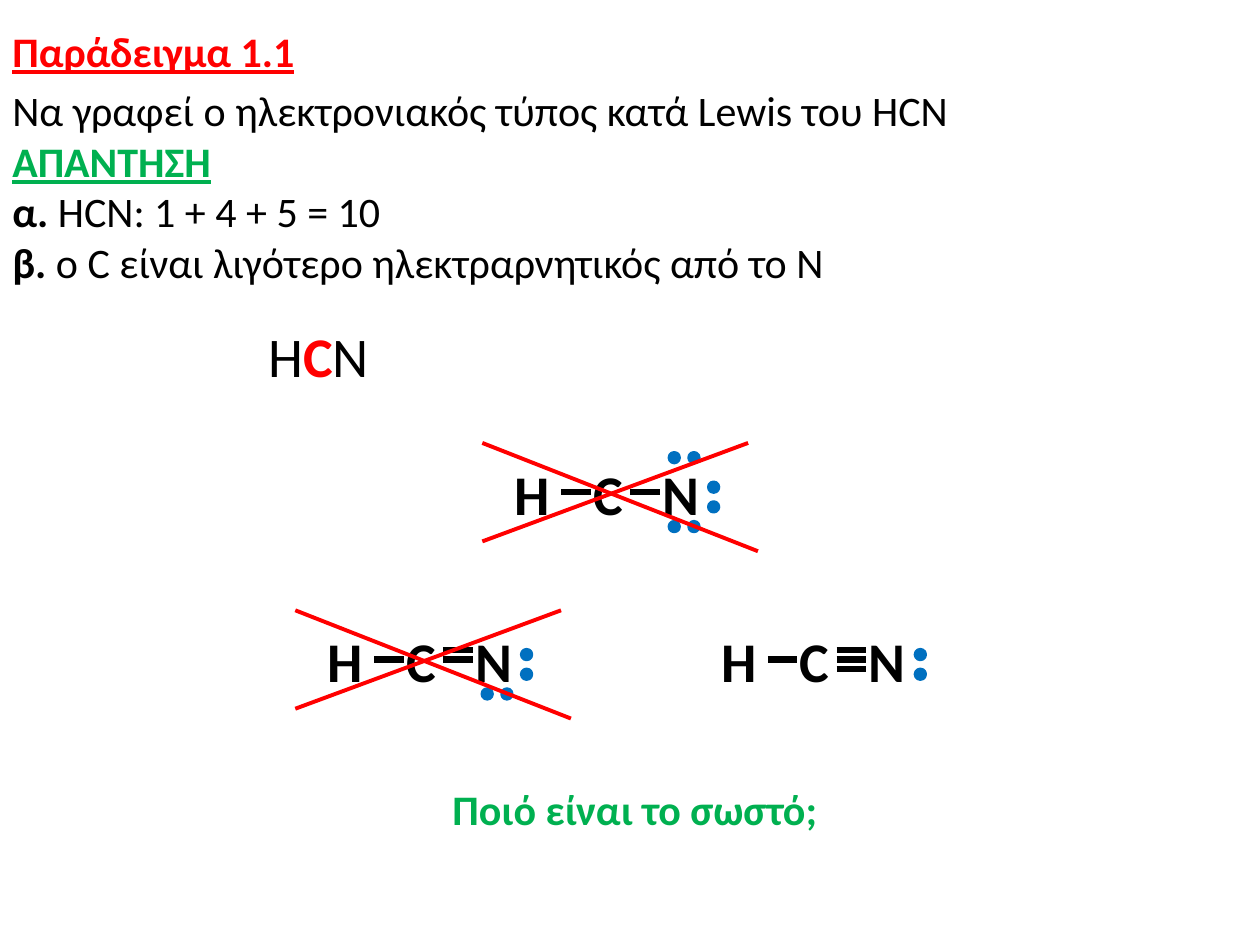
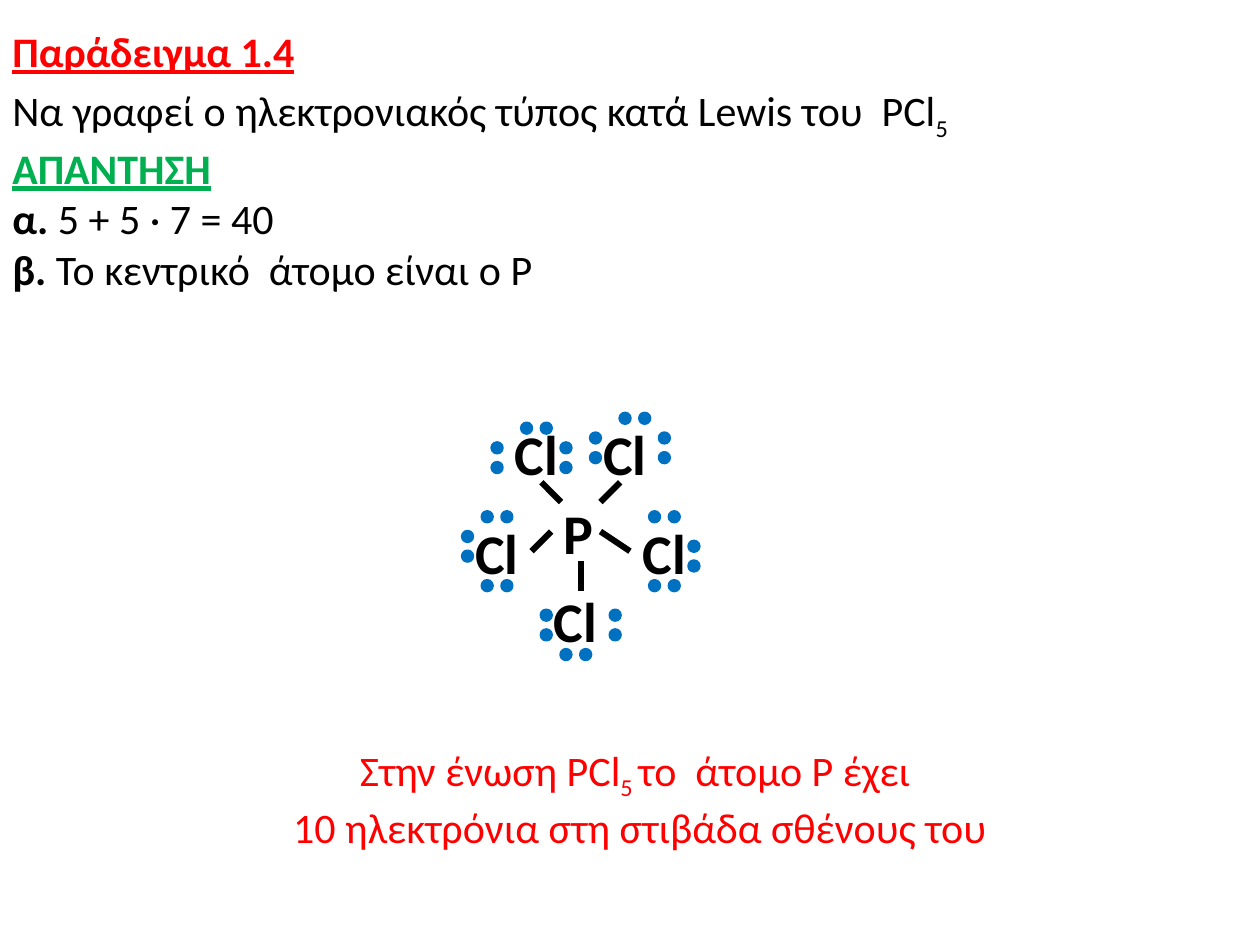
import pptx
import pptx.dml.color
import pptx.enum.shapes
import pptx.enum.text
import pptx.oxml.ns
import pptx.util
from lxml import etree

RED = pptx.dml.color.RGBColor(0xFF, 0x00, 0x00)
GREEN = pptx.dml.color.RGBColor(0x00, 0xB0, 0x50)
BLUE = pptx.dml.color.RGBColor(0x00, 0x70, 0xC0)
BLACK = pptx.dml.color.RGBColor(0x00, 0x00, 0x00)

SLIDE_WIDTH = pptx.util.Inches(10)
SLIDE_HEIGHT = pptx.util.Inches(7.5)
COLUMNS = 128
CELL = SLIDE_WIDTH / COLUMNS  # square cells, so the slide has 96 rows

PLAIN = {"name": "Calibri", "size": pptx.util.Pt(24), "color": BLACK}
BOLD = {**PLAIN, "bold": True}
TITLE = {**BOLD, "color": RED, "underline": True}
ANSWER = {**TITLE, "color": GREEN}
SUBSCRIPT = {**PLAIN, "baseline": -25000}
QUESTION = {**BOLD, "color": GREEN}
REMARK = {**PLAIN, "color": RED}
REMARK_SUBSCRIPT = {**SUBSCRIPT, "color": RED}
SYMBOL = {**BOLD, "size": pptx.util.Pt(32)}
FORMULA = {**SYMBOL, "bold": False}
CENTRAL = {**SYMBOL, "color": RED}

SYMBOL_WIDTHS = {"H": 6.5, "C": 5.6, "N": 6.5, "P": 5.8, "Cl": 7}
SYMBOL_HEIGHT = 8.2

# Each lone pair: column, row, column step and row step between its two dots
ACROSS, DOWNWARD = (2, 0), (0, 2)
ABOVE_PAIR, BELOW_PAIR, RIGHT_PAIR = (0, 0, ACROSS), (0, 7, ACROSS), (4, 3, DOWNWARD)
LONE_PAIRS = {
    "right": (ABOVE_PAIR, BELOW_PAIR, RIGHT_PAIR),
    "left": ((2, 0, ACROSS), (2, 7, ACROSS), (0, 2, DOWNWARD)),
    "down": ((0, 0, DOWNWARD), (7, 0, DOWNWARD), (2, 4, ACROSS)),
    "up": ((0, 2, DOWNWARD), (7, 2, DOWNWARD), (3, 0, ACROSS)),
}


def cells(*counts):
    """Turn counts of grid cells into slide lengths."""
    return [pptx.util.Emu(round(count * CELL)) for count in counts]


def format_run(run, formats):
    for name, value in formats.items():
        if name == "color":
            run.font.color.rgb = value
        elif name == "baseline":
            run._r.get_or_add_rPr().set("baseline", str(value))
        else:
            setattr(run.font, name, value)


def add_text(slide, box, paragraphs, alignment=None, wrap=True):
    """Write paragraphs, each a list of (text, formats) runs, in a box of cells."""
    frame = slide.shapes.add_textbox(*cells(*box)).text_frame
    frame.word_wrap = wrap
    for index, runs in enumerate(paragraphs):
        paragraph = frame.paragraphs[0] if index == 0 else frame.add_paragraph()
        paragraph.alignment = alignment
        for text, formats in runs:
            run = paragraph.add_run()
            run.text = text
            format_run(run, formats)


def add_symbol(slide, left, top, symbol):
    box = (left, top, SYMBOL_WIDTHS[symbol], SYMBOL_HEIGHT)
    add_text(slide, box, [[(symbol, SYMBOL)]], wrap=False)


def add_line(slide, left, top, ends, color=BLACK, width=3.5):
    """Draw a line between two ends given relative to left and top."""
    x1, y1, x2, y2 = ends
    connector = slide.shapes.add_connector(
        pptx.enum.shapes.MSO_CONNECTOR.STRAIGHT,
        *cells(left + x1, top + y1, left + x2, top + y2))
    connector.line.color.rgb = color
    connector.line.width = pptx.util.Pt(width)
    etree.SubElement(connector._element.spPr, pptx.oxml.ns.qn("a:effectLst"))


def add_lone_pairs(slide, left, top, pairs):
    for column, row, (column_step, row_step) in pairs:
        for step in range(2):
            dot = slide.shapes.add_shape(
                pptx.enum.shapes.MSO_SHAPE.OVAL,
                *cells(left + column + step * column_step,
                       top + row + step * row_step, 1, 1))
            dot.shadow.inherit = False
            dot.fill.solid()
            dot.fill.fore_color.rgb = BLUE
            dot.line.color.rgb = BLUE
            dot.line.width = pptx.util.Pt(2)


def add_cyanide(slide, left, top, bond_rows, pairs, rejected):
    """Draw H-C-N with one C-N bond per row, crossed out if rejected."""
    for column, symbol in ((15, "N"), (8, "C"), (0, "H")):
        add_symbol(slide, left + column, top, symbol)
    add_line(slide, left, top, (6, 4, 9, 4))
    for row in bond_rows:
        add_line(slide, left, top, (13, row, 16, row))
    add_lone_pairs(slide, left + 17, top, pairs)
    if rejected:
        for ends in ((-2, -1, 26, 10), (-2, 9, 25, -1)):
            add_line(slide, left, top, ends, RED, 2.25)


def add_pentachloride(slide, left, top):
    add_symbol(slide, left + 9, top + 8, "P")
    for ends in ((14, 12, 17, 14), (7, 14, 9, 12), (12, 15, 12, 18),
                 (8, 7, 10, 9), (14, 9, 16, 7)):
        add_line(slide, left, top, ends)
    # Symbol column and row, then the column and row of its lone pairs
    chlorines = (
        ("right", 17, 10, 19, 10),
        ("left", 0, 10, 0, 10),
        ("down", 8, 17, 8, 20),
        ("up", 13, 0, 13, 0),
        ("up", 4, 0, 3, 1),
    )
    for side, column, row, pair_column, pair_row in chlorines:
        add_symbol(slide, left + column, top + row, "Cl")
        add_lone_pairs(slide, left + pair_column, top + pair_row, LONE_PAIRS[side])


def add_example(presentation, number, task, steps, caption_box, caption):
    """Add a slide with its heading, task, answer steps and centred caption."""
    slide = presentation.slides.add_slide(presentation.slide_layouts[6])
    add_text(slide, (0, 2, COLUMNS, 6.4), [[(f"Παράδειγμα {number}", TITLE)]])
    lettered = [[(f"{letter}. ", BOLD), (step, PLAIN)]
                for letter, step in zip("αβ", steps)]
    add_text(slide, (0, 8, COLUMNS, 22), [task, [("ΑΠΑΝΤΗΣΗ", ANSWER)], *lettered])
    add_text(slide, caption_box, caption, pptx.enum.text.PP_ALIGN.CENTER)
    return slide


def add_cyanide_slide(presentation):
    slide = add_example(
        presentation, "1.1",
        [("Να γραφεί ο ηλεκτρονιακός τύπος κατά Lewis του HCN", PLAIN)],
        ("HCN: 1 + 4 + 5 = 10", "ο C είναι λιγότερο ηλεκτραρνητικός από το Ν"),
        (44, 79, 41, 6.4), [[("Ποιό είναι το σωστό;", QUESTION)]])
    add_text(slide, (26, 32, 12.9, SYMBOL_HEIGHT),
             [[("Η", FORMULA), ("C", CENTRAL), ("N", FORMULA)]], wrap=False)
    add_cyanide(slide, 51, 46, (4,), LONE_PAIRS["right"], True)
    add_cyanide(slide, 32, 63, (3, 4), (BELOW_PAIR, RIGHT_PAIR), True)
    add_cyanide(slide, 72, 63, (3, 4, 5), (RIGHT_PAIR,), False)


def add_pentachloride_slide(presentation):
    slide = add_example(
        presentation, "1.4",
        [("Να γραφεί ο ηλεκτρονιακός τύπος κατά Lewis του  PCl", PLAIN),
         ("5", SUBSCRIPT)],
        ("5 + 5 · 7 = 40", "Το κεντρικό  άτομο είναι ο P"),
        (28, 75, 74, 11.6),
        [[("Στην ένωση PCl", REMARK), ("5 ", REMARK_SUBSCRIPT),
          ("το  άτομο Ρ έχει ", REMARK)],
         [("10 ηλεκτρόνια στη στιβάδα σθένους του", REMARK)]])
    add_pentachloride(slide, 47, 42)


def main():
    presentation = pptx.Presentation()
    presentation.slide_width = SLIDE_WIDTH
    presentation.slide_height = SLIDE_HEIGHT
    add_cyanide_slide(presentation)
    add_pentachloride_slide(presentation)
    presentation.save("out.pptx")


if __name__ == "__main__":
    main()
